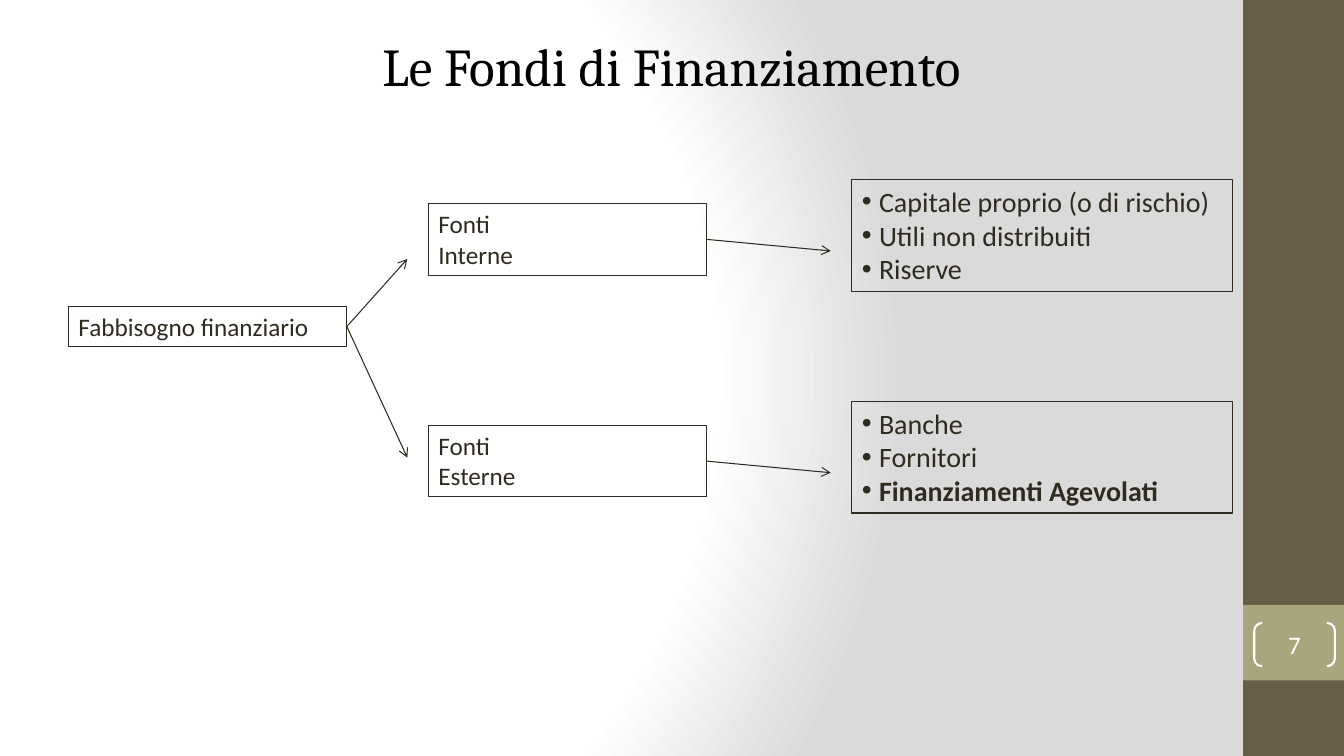
from lxml import etree
from pptx import Presentation, util as u
from pptx.dml.color import RGBColor
from pptx.enum import shapes, text
from pptx.oxml import parse_xml
from pptx.oxml.ns import nsdecls, qn

INK = "2F2B20"
WHITE = "FFFFFF"
RIGHT = 3


def rgb(code):
    return RGBColor.from_string(code)


class Deck:
    font = "Calibri"
    thin = 0.75

    def __init__(self):
        self.prs = Presentation()
        self.prs.slide_width = u.Inches(13.33)
        self.prs.slide_height = u.Inches(7.5)
        self.slide = self.prs.slides.add_slide(self.prs.slide_layouts[6])

    def back(self, stops):
        """Fill the background with a circular gradient of (percent, colour) stops."""
        self.slide.background.fill.solid()
        props = self.slide._element.find(".//" + qn("p:bgPr"))
        marks = "".join(
            f'<a:gs pos="{pos * 1000}"><a:srgbClr val="{code}"/></a:gs>'
            for pos, code in stops)
        props.replace(props[0], parse_xml(
            f'<a:gradFill {nsdecls("a")} rotWithShape="1"><a:gsLst>{marks}</a:gsLst>'
            '<a:path path="circle"><a:fillToRect l="20000" t="50000" r="100000" b="50000"/>'
            '</a:path></a:gradFill>'))

    def shape(self, place, fill=None, line=None, width=thin,
              kind=shapes.MSO_SHAPE.RECTANGLE):
        item = self.slide.shapes.add_shape(kind, *map(u.Inches, place))
        item.shadow.inherit = False
        if fill:
            item.fill.solid()
            item.fill.fore_color.rgb = rgb(fill)
        else:
            item.fill.background()
        if line:
            item.line.color.rgb = rgb(line)
            item.line.width = u.Pt(width)
        else:
            item.line.fill.background()
        return item

    def label(self, item, lines, size, color=INK, font=font, bold=(),
              align=text.PP_ALIGN.LEFT, anchor=text.MSO_ANCHOR.TOP, bullet=False):
        frame = item.text_frame
        frame.text = "\n".join(lines)
        frame.word_wrap = True
        frame.vertical_anchor = anchor
        for para in frame.paragraphs:
            para.alignment = align
            if bullet:
                props = para._p.get_or_add_pPr()
                props.set("marL", str(u.Inches(0.17)))
                props.set("indent", str(-u.Inches(0.17)))
                etree.SubElement(props, qn("a:buFont"), typeface="Arial")
                etree.SubElement(props, qn("a:buChar"), char="•")
            for run in para.runs:
                run.font.name = font
                run.font.size = u.Pt(size)
                run.font.color.rgb = rgb(color)
                run.font.bold = run.text in bold
        return frame

    def title(self, words, place):
        item = self.slide.shapes.add_textbox(*map(u.Inches, place))
        frame = self.label(item, [words], 38, "000000", "Cambria",
                           align=text.PP_ALIGN.CENTER, anchor=text.MSO_ANCHOR.MIDDLE)
        frame.margin_top = u.Inches(0.09)
        frame.paragraphs[0].line_spacing = 0.93

    def box(self, place, lines, size=18, **style):
        item = self.shape(place, line=INK)
        frame = self.label(item, lines, size, **style)
        frame.auto_size = text.MSO_AUTO_SIZE.SHAPE_TO_FIT_TEXT
        return item

    def arrow(self, start, x, y):
        """Draw an arrow from the right side of a box to a point."""
        line = self.slide.shapes.add_connector(
            shapes.MSO_CONNECTOR.STRAIGHT, 0, 0, u.Inches(x), u.Inches(y))
        line.begin_connect(start, RIGHT)
        line.line.color.rgb = rgb(INK)
        line.line.width = u.Pt(self.thin)
        etree.SubElement(line.line._get_or_add_ln(), qn("a:tailEnd"), type="arrow")
        etree.SubElement(line._element.spPr, qn("a:effectLst"))

    def number(self, value, place):
        item = self.shape(place, line=WHITE, width=1.5,
                          kind=shapes.MSO_SHAPE.DOUBLE_BRACKET)
        item.adjustments[0] = 0.18
        frame = self.label(item, [value], 18, WHITE, align=text.PP_ALIGN.CENTER,
                           anchor=text.MSO_ANCHOR.MIDDLE)
        frame.margin_left = frame.margin_right = 0
        frame.margin_top = frame.margin_bottom = 0


def main():
    deck = Deck()
    deck.back([(0, WHITE), (75, WHITE), (100, "DADADA")])
    deck.shape((12.33, 0, 1, 7.5), "675E47")
    deck.shape((12.33, 6, 1, 0.75), "A9A57C")
    deck.title("Le Fondi di Finanziamento", (1, 0.05, 11.32, 1.22))

    need = deck.box((0.68, 3.04, 2.76, 0.4), ["Fabbisogno finanziario"])
    funds = [
        (2.02, 2.57, "Interne",
         ["Capitale proprio (o di rischio)", "Utili non distribuiti", "Riserve"]),
        (4.22, 4.54, "Esterne",
         ["Banche", "Fornitori", "Finanziamenti Agevolati"]),
    ]
    for top, tip, kind, items in funds:
        source = deck.box((4.25, top, 2.76, 0.71), ["Fonti", kind])
        deck.box((8.45, top - 0.24, 3.77, 1.11), items, 20, bullet=True,
                 bold=["Finanziamenti Agevolati"])
        deck.arrow(need, 4.04, tip)
        deck.arrow(source, 8.24, top + 0.47)

    deck.number("7", (12.44, 6.18, 0.8, 0.43))
    deck.prs.save("out.pptx")


if __name__ == "__main__":
    main()
